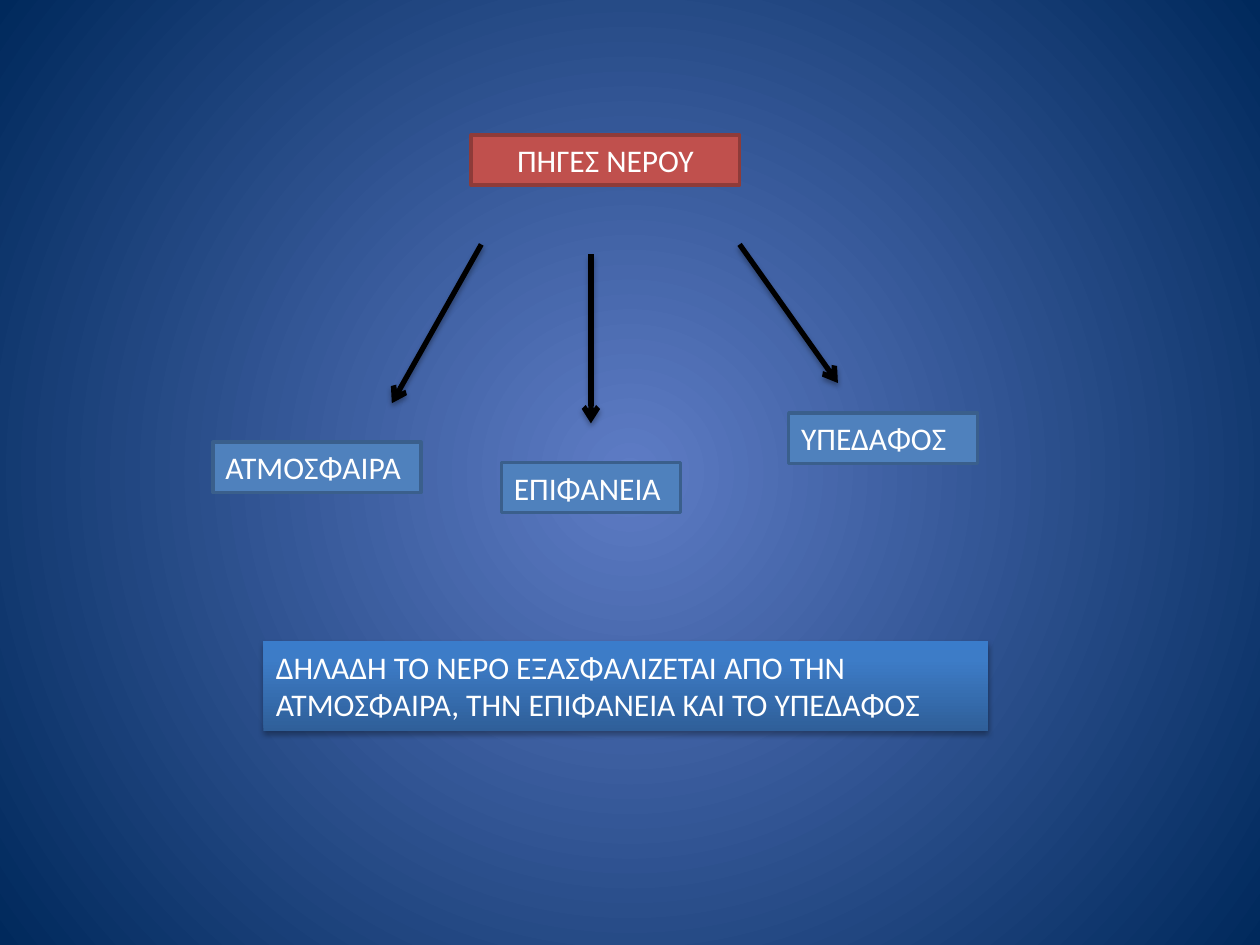
import dataclasses
import lxml.etree
import pptx
import pptx.dml.color
import pptx.enum.shapes
import pptx.enum.text
import pptx.oxml
import pptx.oxml.ns
import pptx.util

SCALE = 9144
NS = pptx.oxml.ns.nsdecls("a")


@dataclasses.dataclass(frozen=True)
class Theme:
    font: str = "Calibri"
    size: int = 18
    text: str = "FFFFFF"
    red: str = "C0504D"
    red_edge: str = "8E3B39"
    blue: str = "4F81BD"
    blue_edge: str = "3A5F8C"
    arrow: str = "000000"
    edge: int = 2
    stroke: int = 3
    back: tuple = ((0, "5E7CC5"), (100, "00295C"))
    band: tuple = ((0, "2F5F99"), (80, "3D7CC7"), (100, "3A7CCB"))


THEME = Theme()
ALIGN = pptx.enum.text.PP_ALIGN
FIT = pptx.enum.text.MSO_AUTO_SIZE
RADIAL = '<a:path path="circle"><a:fillToRect l="50000" t="50000" r="50000" b="50000"/></a:path>'
UPWARD = '<a:lin ang="16200000" scaled="0"/>'


def px(num):
    return pptx.util.Emu(num * SCALE)


def rgb(code):
    return pptx.dml.color.RGBColor.from_string(code)


def blend(fill, host, stops, kind):
    fill.solid()
    marks = "".join(
        f'<a:gs pos="{pos * 1000}"><a:srgbClr val="{code}"/></a:gs>' for pos, code in stops
    )
    grad = pptx.oxml.parse_xml(
        f'<a:gradFill {NS} rotWithShape="1"><a:gsLst>{marks}</a:gsLst>{kind}</a:gradFill>'
    )
    old = host.find(pptx.oxml.ns.qn("a:solidFill"))
    host.replace(old, grad)


def shade(props):
    for old in props.findall(pptx.oxml.ns.qn("a:effectLst")):
        props.remove(old)
    props.append(pptx.oxml.parse_xml(
        f'<a:effectLst {NS}><a:outerShdw blurRad="40000" dist="23000" dir="5400000" '
        'rotWithShape="0"><a:srgbClr val="000000"><a:alpha val="35000"/></a:srgbClr>'
        '</a:outerShdw></a:effectLst>'
    ))


def place(shape, box):
    shape.left, shape.top, shape.width, shape.height = map(px, box)


def write(shape, text, align=ALIGN.LEFT, fit=FIT.SHAPE_TO_FIT_TEXT):
    frame = shape.text_frame
    frame.text = text
    frame.word_wrap = True
    frame.auto_size = fit
    frame.vertical_anchor = pptx.enum.text.MSO_ANCHOR.TOP
    para = frame.paragraphs[0]
    para.alignment = align
    para.font.name = THEME.font
    para.font.size = pptx.util.Pt(THEME.size)
    para.font.color.rgb = rgb(THEME.text)


def paint(shape, fill, edge):
    shape.fill.solid()
    shape.fill.fore_color.rgb = rgb(fill)
    shape.line.color.rgb = rgb(edge)
    shape.line.width = pptx.util.Pt(THEME.edge)


def add_box(slide, box):
    shape = slide.shapes.add_shape(
        pptx.enum.shapes.MSO_SHAPE.RECTANGLE, *map(px, box)
    )
    shape.shadow.inherit = False
    return shape


def add_title(slide, box, text):
    title = slide.shapes.title
    place(title, box)
    paint(title, THEME.red, THEME.red_edge)
    write(title, text, ALIGN.CENTER, FIT.NONE)


def add_arrow(slide, start, end):
    arrow = slide.shapes.add_connector(
        pptx.enum.shapes.MSO_CONNECTOR.STRAIGHT, *map(px, start + end)
    )
    arrow.line.color.rgb = rgb(THEME.arrow)
    arrow.line.width = pptx.util.Pt(THEME.stroke)
    tail = pptx.oxml.ns.qn("a:tailEnd")
    lxml.etree.SubElement(arrow.line._get_or_add_ln(), tail, type="arrow")
    shade(arrow.element.spPr)


def add_source(slide, box, text):
    shape = add_box(slide, box)
    paint(shape, THEME.blue, THEME.blue_edge)
    write(shape, text)


def add_band(slide, box, text):
    shape = add_box(slide, box)
    blend(shape.fill, shape.element.spPr, THEME.band, UPWARD)
    shape.line.fill.background()
    shade(shape.element.spPr)
    write(shape, text)


def main():
    deck = pptx.Presentation()
    deck.slide_width, deck.slide_height = px(1000), px(750)
    slide = deck.slides.add_slide(deck.slide_layouts.get_by_name("Title Only"))
    fill = slide.background.fill
    fill.solid()
    host = slide.element.find(".//" + pptx.oxml.ns.qn("p:bgPr"))
    blend(fill, host, THEME.back, RADIAL)

    add_title(slide, (374, 107, 213, 40), "ΠΗΓΕΣ ΝΕΡΟΥ")
    for start, end in (
        ((382, 194), (311, 320)),
        ((469, 202), (469, 336)),
        ((587, 194), (665, 304)),
    ):
        add_arrow(slide, start, end)
    for box, text in (
        ((169, 351, 165, 40), "ΑΤΜΟΣΦΑΙΡΑ"),
        ((398, 367, 142, 40), "ΕΠΙΦΑΝΕΙΑ"),
        ((626, 328, 150, 40), "ΥΠΕΔΑΦΟΣ"),
    ):
        add_source(slide, box, text)
    add_band(
        slide, (209, 509, 575, 71),
        "ΔΗΛΑΔΗ ΤΟ ΝΕΡΟ ΕΞΑΣΦΑΛΙΖΕΤΑΙ ΑΠΟ ΤΗΝ ΑΤΜΟΣΦΑΙΡΑ, ΤΗΝ ΕΠΙΦΑΝΕΙΑ ΚΑΙ ΤΟ ΥΠΕΔΑΦΟΣ",
    )
    deck.save("out.pptx")


if __name__ == "__main__":
    main()
